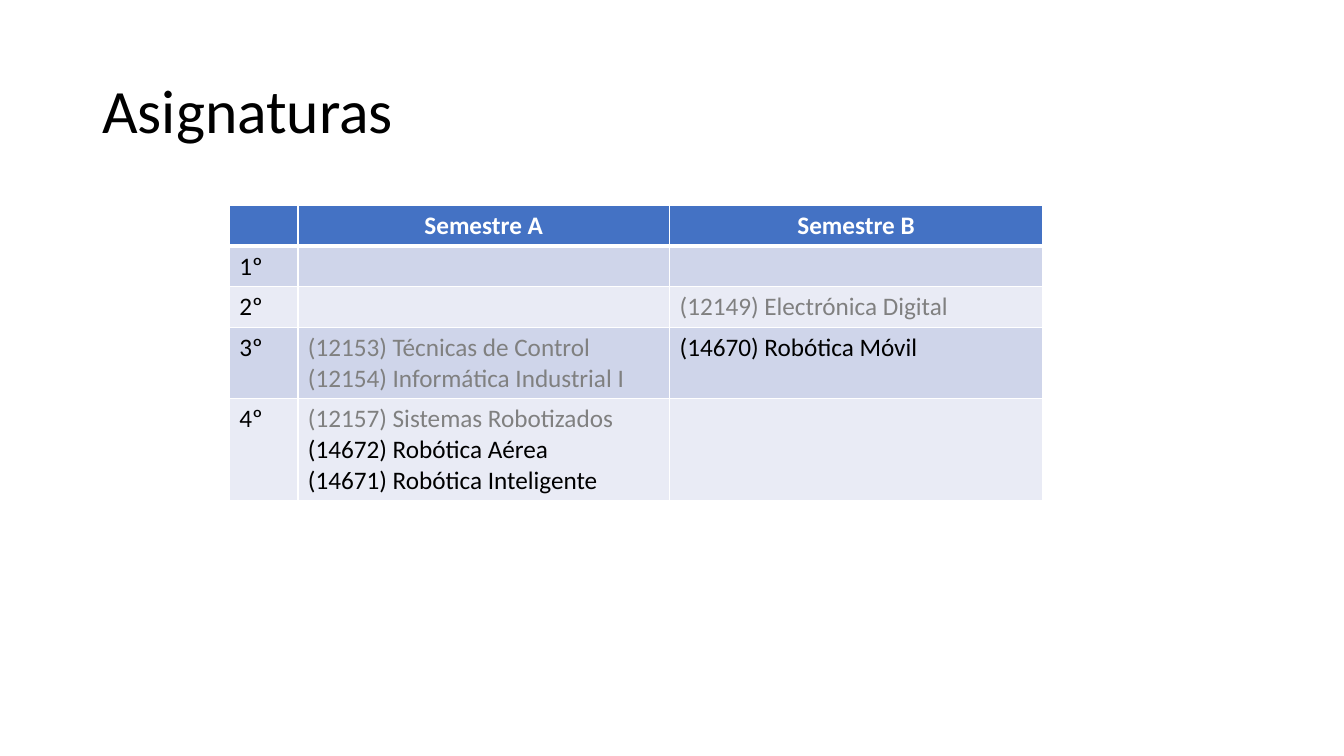
from lxml import etree
from pptx import Presentation
from pptx.dml.color import RGBColor
from pptx.enum import text
from pptx.oxml import ns
from pptx.util import Pt

FONT = "Calibri"
COLORS = {
    "black": "000000",
    "white": "FFFFFF",
    "gray": "808080",
    "header": "4472C4",
    "odd_row": "CFD5EA",
    "even_row": "E9EBF5",
}
COLUMN_WIDTHS = [49, 265.5, 266.5]
ROW_HEIGHTS = [29.2, 29.2, 29.2, 50.8, 72.4]
HEADINGS = ["", "Semestre A", "Semestre B"]
# Each course year holds the subjects of both semesters with their text colour.
YEARS = [
    ("1º", [], []),
    ("2º", [], [("(12149) Electrónica Digital", "gray")]),
    ("3º",
     [("(12153) Técnicas de Control", "gray"),
      ("(12154) Informática Industrial I", "gray")],
     [("(14670) Robótica Móvil", "black")]),
    ("4º",
     [("(12157) Sistemas Robotizados", "gray"),
      ("(14672) Robótica Aérea", "black"),
      ("(14671) Robótica Inteligente", "black")],
     []),
]


def rgb(name):
    return RGBColor.from_string(COLORS[name])


def style_font(font, size, color, bold=False):
    font.name = FONT
    font.size = Pt(size)
    font.bold = bold
    font.color.rgb = rgb(color)


def add_title(slide, title):
    box = slide.shapes.add_textbox(Pt(66), Pt(28.8), Pt(828), Pt(104.4))
    frame = box.text_frame
    frame.word_wrap = True
    frame.vertical_anchor = text.MSO_ANCHOR.MIDDLE
    paragraph = frame.paragraphs[0]
    paragraph.text = title
    paragraph.line_spacing = 0.9
    style_font(paragraph.font, 44, "black")


def add_borders(cell, top, bottom):
    """Draw white cell borders; top and bottom are widths in points."""
    properties = cell._tc.get_or_add_tcPr()
    for side, width in (("L", 1), ("R", 1), ("T", top), ("B", bottom)):
        line = etree.SubElement(properties, ns.qn(f"a:ln{side}"), w=str(Pt(width)))
        fill = etree.SubElement(line, ns.qn("a:solidFill"))
        etree.SubElement(fill, ns.qn("a:srgbClr"), val=COLORS["white"])


def fill_cell(cell, lines, fill, header=False):
    """Write (text, colour) lines, one per paragraph."""
    frame = cell.text_frame
    for index, (content, color) in enumerate(lines):
        paragraph = frame.add_paragraph() if index else frame.paragraphs[0]
        paragraph.text = content
        if header:
            paragraph.alignment = text.PP_ALIGN.CENTER
        style_font(paragraph.font, 18, color, header)
    cell.fill.solid()
    cell.fill.fore_color.rgb = rgb(fill)


def add_subject_table(slide):
    rows = [[[(heading, "white")] if heading else [] for heading in HEADINGS]]
    rows += [[[(year, "black")], first, second] for year, first, second in YEARS]
    table = slide.shapes.add_table(
        len(rows), len(HEADINGS), Pt(163.8), Pt(146.5),
        Pt(sum(COLUMN_WIDTHS)), Pt(sum(ROW_HEIGHTS))).table
    for column, width in zip(table.columns, COLUMN_WIDTHS):
        column.width = Pt(width)
    for number, (row, height, contents) in enumerate(
            zip(table.rows, ROW_HEIGHTS, rows)):
        row.height = Pt(height)
        header = number == 0
        fill = "header" if header else "odd_row" if number % 2 else "even_row"
        for cell, lines in zip(row.cells, contents):
            add_borders(cell, 3 if number == 1 else 1, 3 if header else 1)
            fill_cell(cell, lines, fill, header)


def main():
    presentation = Presentation()
    presentation.slide_width = Pt(960)
    presentation.slide_height = Pt(540)
    slide = presentation.slides.add_slide(presentation.slide_layouts[6])
    add_title(slide, "Asignaturas")
    add_subject_table(slide)
    presentation.save("out.pptx")


if __name__ == "__main__":
    main()
